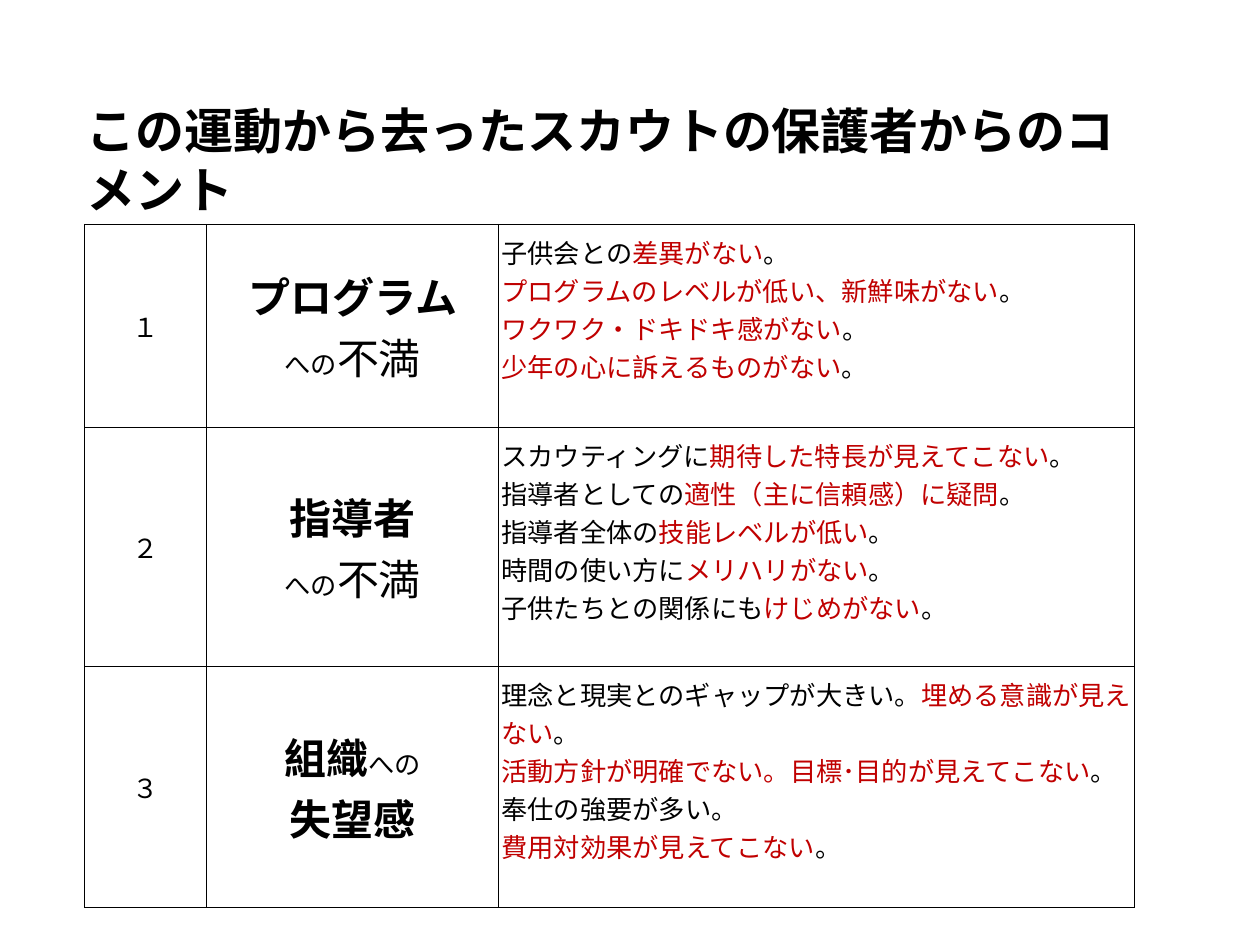
from lxml.etree import SubElement
from pptx import Presentation
from pptx.dml.color import RGBColor
from pptx.enum.text import MSO_ANCHOR, MSO_AUTO_SIZE, PP_ALIGN
from pptx.oxml.ns import qn
from pptx.util import Inches, Pt

BLACK = "000000"
RED = "C00000"
JAPANESE_FONT = "Noto Sans CJK JP"
COLUMN_WIDTHS = (0.97, 2.32, 5.04)
LARGE_BOLD = {"size": 24, "bold": True}

ROWS = [
    {
        "number": "１",
        "height": 1.61,
        "topic": [
            [("プログラム", LARGE_BOLD)],
            [("への", {}), ("不満", {"size": 24})],
        ],
        "comments": [
            ("子供会との", "差異がない", "。"),
            ("", "プログラムのレベルが低い、新鮮味がない", "。"),
            ("", "ワクワク・ドキドキ感がない", "。"),
            ("", "少年の心に訴えるものがない", "。"),
        ],
        "alignment": PP_ALIGN.JUSTIFY,
    },
    {
        "number": "２",
        "height": 1.9,
        "topic": [
            [("指導者", LARGE_BOLD)],
            [("への", {}), ("不満", {"size": 24})],
        ],
        "comments": [
            ("スカウティングに", "期待した特長が見えてこない", "。"),
            ("指導者としての", "適性（主に信頼感）に疑問", "。"),
            ("指導者全体の", "技能レベルが低い", "。"),
            ("時間の使い方に", "メリハリがない", "。"),
            ("子供たちとの関係にも", "けじめがない", "。"),
        ],
        "alignment": PP_ALIGN.JUSTIFY,
    },
    {
        "number": "３",
        "height": 1.91,
        "topic": [
            [("組織", LARGE_BOLD), ("への", {})],
            [("失望感", LARGE_BOLD)],
        ],
        "comments": [
            ("理念と現実とのギャップが大きい。", "埋める意識が見えない", "。"),
            ("", "活動方針が明確でない。目標･目的が見えてこない", "。"),
            ("奉仕の強要が多い。", "", ""),
            ("", "費用対効果が見えてこない", "。"),
        ],
        "alignment": PP_ALIGN.LEFT,
    },
]


def color(value):
    """Turn a hex string into a colour."""
    return RGBColor.from_string(value)


def add_run(paragraph, text, size=15, bold=False, fill=BLACK, font=JAPANESE_FONT):
    """Add a formatted run with its Latin and East Asian fonts."""
    run = paragraph.add_run()
    run.text = text
    run.font.size = Pt(size)
    run.font.bold = bold
    run.font.color.rgb = color(fill)
    run.font.name = font
    SubElement(run.font._element, qn("a:ea"), typeface=JAPANESE_FONT)


def add_borders(cell):
    """Draw a thin black line on each side of a cell."""
    properties = cell._tc.get_or_add_tcPr()
    for side in ("lnL", "lnR", "lnT", "lnB"):
        line = SubElement(properties, qn(f"a:{side}"), w=str(Pt(0.53)))
        fill = SubElement(line, qn("a:solidFill"))
        SubElement(fill, qn("a:srgbClr"), val=BLACK)


def fill_cell(cell, lines, alignment, anchor, margins):
    """Format a cell and write one paragraph for each line of runs."""
    add_borders(cell)
    cell.fill.background()
    cell.vertical_anchor = anchor
    cell.margin_left, cell.margin_top, cell.margin_right, cell.margin_bottom = map(Inches, margins)
    frame = cell.text_frame
    for index, line in enumerate(lines):
        paragraph = frame.add_paragraph() if index else frame.paragraphs[0]
        paragraph.alignment = alignment
        for text, text_format in line:
            add_run(paragraph, text, **text_format)


def comment_line(before, highlight, after):
    """Return the runs of a comment with its highlight in red."""
    runs = ((before, {}), (highlight, {"fill": RED}), (after, {}))
    return [run for run in runs if run[0]]


def add_title(slide, text):
    """Write the title in its placeholder."""
    title = slide.shapes.title
    title.left, title.top, title.width, title.height = map(Inches, (0.59, 0.75, 8.66, 1.04))
    frame = title.text_frame
    frame.word_wrap = True
    frame.auto_size = MSO_AUTO_SIZE.NONE
    frame.vertical_anchor = MSO_ANCHOR.TOP
    paragraph = frame.paragraphs[0]
    paragraph.alignment = PP_ALIGN.LEFT
    paragraph.line_spacing = Pt(33.7)
    add_run(paragraph, text, size=28, bold=True, font="Arial")


def add_comment_table(slide):
    """Add the table of numbered topics and comments."""
    height = sum(row["height"] for row in ROWS)
    table = slide.shapes.add_table(
        len(ROWS), len(COLUMN_WIDTHS), Inches(0.67), Inches(1.78),
        Inches(sum(COLUMN_WIDTHS)), Inches(height),
    ).table
    table.first_row = False
    table.horz_banding = False
    for column, width in zip(table.columns, COLUMN_WIDTHS):
        column.width = Inches(width)
    centered = (PP_ALIGN.CENTER, MSO_ANCHOR.MIDDLE, (0.01,) * 4)
    for row, content in zip(table.rows, ROWS):
        row.height = Inches(content["height"])
        number, topic, comments = row.cells
        fill_cell(number, [[(content["number"], {})]], *centered)
        fill_cell(topic, content["topic"], *centered)
        lines = [comment_line(*parts) for parts in content["comments"]]
        fill_cell(comments, lines, content["alignment"], MSO_ANCHOR.TOP, (0.02, 0.07, 0.01, 0.02))


def main():
    """Build and save the slide."""
    presentation = Presentation()
    presentation.slide_width = Inches(10)
    presentation.slide_height = Inches(7.5)
    slide = presentation.slides.add_slide(presentation.slide_layouts[5])
    add_title(slide, "この運動から去ったスカウトの保護者からのコメント")
    add_comment_table(slide)
    presentation.save("out.pptx")


if __name__ == "__main__":
    main()
